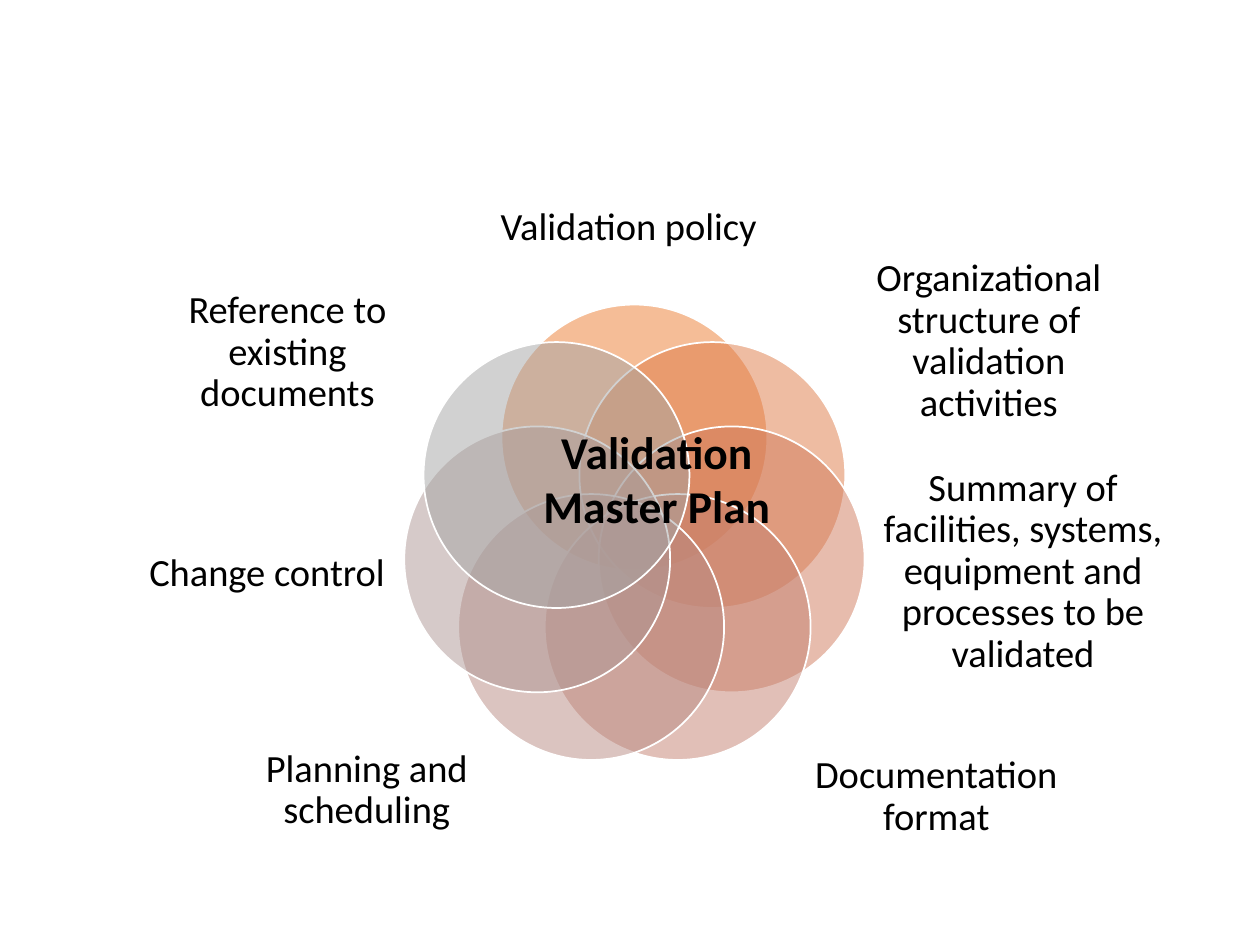
"""Build a slide with a ring of seven overlapping circles about a validation master plan."""
from math import cos, pi, sin

from lxml import etree
from pptx import Presentation
from pptx.dml.color import RGBColor
from pptx.enum.shapes import MSO_SHAPE
from pptx.enum.text import MSO_ANCHOR, PP_ALIGN
from pptx.oxml.ns import qn
from pptx.util import Cm, Pt

OVAL = MSO_SHAPE.OVAL
ROUND = MSO_SHAPE.ROUNDED_RECTANGLE
MIDDLE = MSO_ANCHOR.MIDDLE
CENTER = PP_ALIGN.CENTER

COLORS = {
    "text": "000000",
    "line": "FFFFFF",
    "policy": "ED7D31",
    "structure": "DE7A47",
    "summary": "D17B5C",
    "format": "C48170",
    "planning": "B98A82",
    "change": "AE9694",
    "reference": "A5A5A5",
}
HUB = (12.79, 10.83)
ORBIT = 2.01
SIZE = 5.36
TOPICS = [
    ("policy", "Validation policy", (9.6, 2.95, 6.15, 3.28)),
    ("structure", "Organizational structure of validation activities",
     (17.04, 5.08, 5.79, 3.61)),
    ("summary", "Summary of facilities, systems, equipment and processes to be validated",
     (17.78, 9.6, 5.69, 3.86)),
    ("format", "Documentation format", (15.8, 14.3, 6.15, 3.53)),
    ("planning", "Planning and scheduling", (4.32, 14.17, 6.15, 3.53)),
    ("change", "Change control", (2.54, 9.65, 5.69, 3.86)),
    ("reference", "Reference to existing documents", (2.9, 5.31, 5.79, 3.61)),
]


def color(name):
    """Return the named colour."""
    return RGBColor.from_string(COLORS[name])


def write(frame, text, size, bold=False):
    """Put centred text in a frame."""
    frame.word_wrap = True
    frame.vertical_anchor = MIDDLE
    para = frame.paragraphs[0]
    para.text = text
    para.alignment = CENTER
    para.font.name = "Calibri"
    para.font.size = Pt(size)
    para.font.bold = bold
    para.font.color.rgb = color("text")
    return para


def add_circle(slide, name, angle):
    """Add a half-transparent circle at an angle clockwise from the top."""
    left = HUB[0] + ORBIT * sin(angle) - SIZE / 2
    top = HUB[1] - ORBIT * cos(angle) - SIZE / 2
    shape = slide.shapes.add_shape(OVAL, Cm(left), Cm(top), Cm(SIZE), Cm(SIZE))
    shape.shadow.inherit = False
    shape.fill.solid()
    shape.fill.fore_color.rgb = color(name)
    tint = shape.element.spPr.find(qn("a:solidFill"))[0]
    etree.SubElement(tint, qn("a:alpha"), val="50000")
    shape.line.color.rgb = color("line")
    shape.line.width = Pt(1)


def add_label(slide, text, box):
    """Add a topic label without margins."""
    frame = slide.shapes.add_textbox(*map(Cm, box)).text_frame
    frame.margin_left = frame.margin_right = 0
    frame.margin_top = frame.margin_bottom = 0
    write(frame, text, 22).line_spacing = 0.9


def add_title(slide, text, box):
    """Add the bold title in a clear rounded box."""
    shape = slide.shapes.add_shape(ROUND, *map(Cm, box))
    shape.shadow.inherit = False
    shape.fill.background()
    shape.line.fill.background()
    write(shape.text_frame, text, 26, bold=True)


def main():
    """Build and save the slide."""
    deck = Presentation()
    deck.slide_width, deck.slide_height = Cm(25.4), Cm(19.05)
    slide = deck.slides.add_slide(deck.slide_layouts[6])
    for index, (name, text, box) in enumerate(TOPICS):
        add_circle(slide, name, 2 * pi * index / len(TOPICS))
        add_label(slide, text, box)
    add_title(slide, "Validation Master Plan", (10.26, 8.59, 5.97, 2.11))
    deck.save("out.pptx")


if __name__ == "__main__":
    main()
